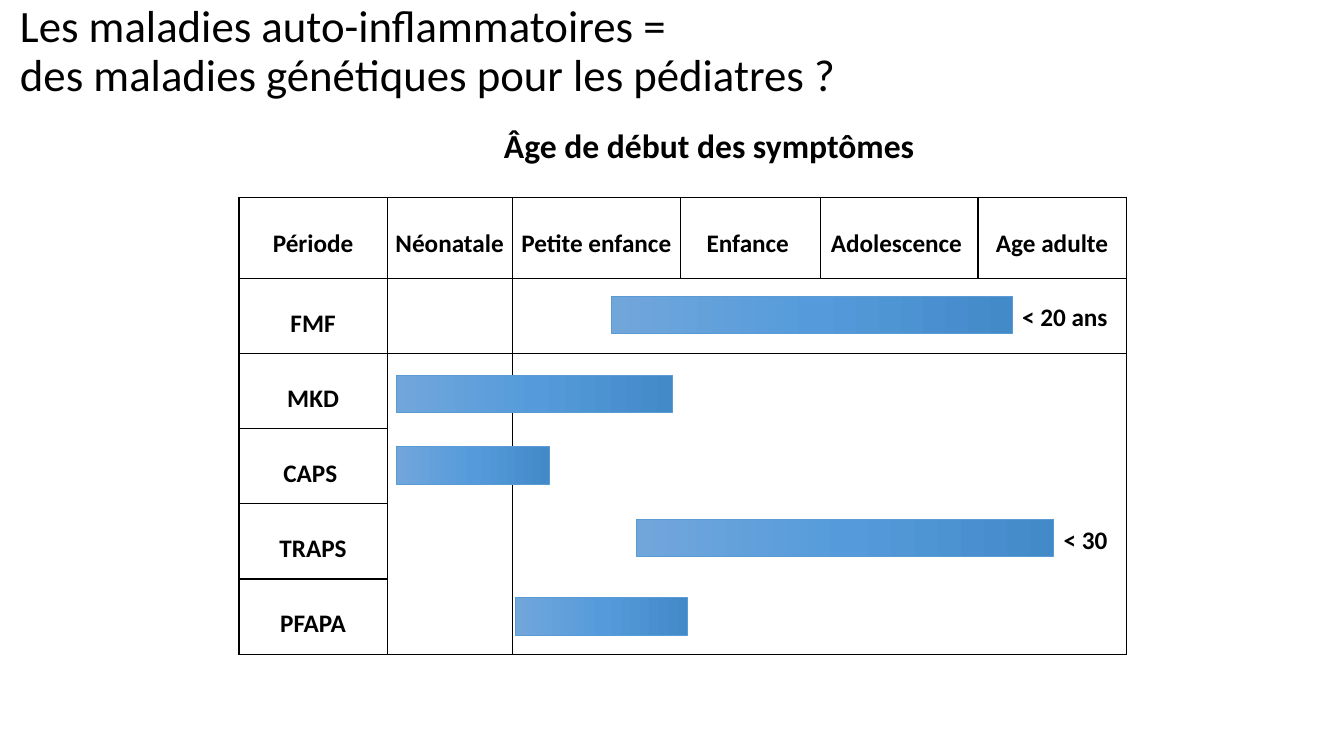
from copy import deepcopy
from dataclasses import dataclass
from itertools import accumulate

from lxml import etree
from pptx import Presentation
from pptx.dml.color import RGBColor
from pptx.enum.shapes import MSO_SHAPE
from pptx.enum.text import MSO_ANCHOR, MSO_AUTO_SIZE, PP_ALIGN
from pptx.oxml.ns import qn
from pptx.util import Inches, Pt

RECTANGLE = MSO_SHAPE.RECTANGLE
TOP, MIDDLE = MSO_ANCHOR.TOP, MSO_ANCHOR.MIDDLE
CENTER = PP_ALIGN.CENTER
GROW, FIXED = MSO_AUTO_SIZE.SHAPE_TO_FIT_TEXT, MSO_AUTO_SIZE.NONE

SLIDE_WIDTH, SLIDE_HEIGHT = Inches(13.33), Inches(7.5)


@dataclass(frozen=True)
class Theme:
    font: str = "Calibri"
    ink: str = "000000"
    bar_line: str = "5B9BD5"
    bar_gradient: tuple[str, ...] = ("71A6DB", "559BDB", "438AC9")
    title_size: int = 32
    heading_size: int = 24
    body_size: int = 18
    border_width: float = 1
    bar_line_width: float = 0.5


@dataclass(frozen=True)
class Onset:
    disease: str
    start_column: float
    end_column: float
    top_row: float
    limit: str = ""


@dataclass(frozen=True)
class Caption:
    text: str
    left: int
    top: int
    width: int
    height: int
    size: int
    bold: bool = True
    wrap: bool = False
    spacing: float = 1.0


def across(percent: float) -> int:
    return round(SLIDE_WIDTH * percent / 100)


def down(percent: float) -> int:
    return round(SLIDE_HEIGHT * percent / 100)


THEME = Theme()
PERIODS = ("Période", "Néonatale", "Petite enfance", "Enfance ", "Adolescence ", "Age adulte")
ONSETS = (
    Onset("FMF", 2.59, 5.23, 1.24, "< 20 ans"),
    Onset("MKD", 1.07, 2.95, 2.29),
    Onset("CAPS ", 1.07, 2.22, 3.24),
    Onset("TRAPS", 2.74, 5.51, 4.2, "< 30"),
    Onset("PFAPA", 2.02, 3.05, 5.25),
)
COLUMN_WIDTHS = [across(share) for share in (11.03, 9.3, 12.53, 10.43, 11.7, 11.03)]
ROW_HEIGHTS = [down(10.67)] + [down(9.95)] * len(ONSETS)
COLUMN_EDGES = list(accumulate(COLUMN_WIDTHS, initial=across(17.78)))
ROW_EDGES = list(accumulate(ROW_HEIGHTS, initial=down(26.13)))
BAR_HEIGHT = ROW_HEIGHTS[-1] // 2
LIMIT_END_COLUMN = 5.95


def grid_position(edges: list[int], place: float) -> int:
    index = int(place)
    return round(edges[index] + (place - index) * (edges[index + 1] - edges[index]))


def apply_font(run, size: int, bold: bool) -> None:
    formats = {"name": THEME.font, "size": Pt(size), "bold": bold}
    for attribute, value in formats.items():
        setattr(run.font, attribute, value)
    run.font.color.rgb = RGBColor.from_string(THEME.ink)


def draw_caption(slide, caption: Caption) -> None:
    box = slide.shapes.add_textbox(caption.left, caption.top, caption.width, caption.height)
    formats = {
        "word_wrap": caption.wrap,
        "auto_size": FIXED if caption.wrap else GROW,
        "vertical_anchor": MIDDLE if caption.wrap else TOP,
    }
    for attribute, value in formats.items():
        setattr(box.text_frame, attribute, value)
    paragraph = box.text_frame.paragraphs[0]
    paragraph.text = caption.text
    paragraph.line_spacing = caption.spacing
    for run in paragraph.runs:
        apply_font(run, caption.size, caption.bold)


def draw_borders(cell, row: int, column: int) -> None:
    last_row, last_column = len(ONSETS), len(PERIODS) - 1
    sides = {
        "a:lnL": row == 0 or column <= 2,
        "a:lnR": row == 0 or column in (0, 1, last_column),
        "a:lnT": column == 0 or row <= 2,
        "a:lnB": column == 0 or row in (0, 1, last_row),
    }
    properties = cell._tc.get_or_add_tcPr()
    for side, visible in sides.items():
        border = etree.SubElement(properties, qn(side), w=str(Pt(THEME.border_width)))
        if visible:
            fill = etree.SubElement(border, qn("a:solidFill"))
            etree.SubElement(fill, qn("a:srgbClr"), val=THEME.ink)
        else:
            etree.SubElement(border, qn("a:noFill"))


def draw_cell(cell, row: int, column: int) -> None:
    draw_borders(cell, row, column)
    cell.fill.background()
    formats = {
        "margin_left": across(0.53),
        "margin_right": across(0.53),
        "margin_top": 0,
        "margin_bottom": 0,
        "vertical_anchor": MIDDLE if row else TOP,
    }
    for attribute, value in formats.items():
        setattr(cell, attribute, value)
    if row and column:
        return
    paragraph = cell.text_frame.paragraphs[0]
    paragraph.alignment = CENTER
    paragraph.line_spacing = 1.5 if row else 2.0
    run = paragraph.add_run()
    run.text = ONSETS[row - 1].disease if row else PERIODS[column]
    apply_font(run, THEME.body_size, True)


def draw_periods(slide) -> None:
    table = slide.shapes.add_table(
        len(ROW_HEIGHTS), len(COLUMN_WIDTHS), COLUMN_EDGES[0], ROW_EDGES[0],
        sum(COLUMN_WIDTHS), sum(ROW_HEIGHTS),
    ).table
    table.first_row = table.horz_banding = False
    for column, width in enumerate(COLUMN_WIDTHS):
        table.columns[column].width = width
    for row, height in enumerate(ROW_HEIGHTS):
        table.rows[row].height = height
        for column in range(len(COLUMN_WIDTHS)):
            draw_cell(table.cell(row, column), row, column)


def draw_onset(slide, onset: Onset) -> None:
    left = grid_position(COLUMN_EDGES, onset.start_column)
    right = grid_position(COLUMN_EDGES, onset.end_column)
    top = grid_position(ROW_EDGES, onset.top_row)
    bar = slide.shapes.add_shape(RECTANGLE, left, top, right - left, BAR_HEIGHT)
    bar.shadow.inherit = False
    bar.line.color.rgb = RGBColor.from_string(THEME.bar_line)
    bar.line.width = Pt(THEME.bar_line_width)
    bar.fill.gradient()
    bar.fill.gradient_angle = 0
    stops = bar._element.spPr.find(".//" + qn("a:gsLst"))
    stops.insert(1, deepcopy(stops[0]))
    for index, (stop, color) in enumerate(zip(bar.fill.gradient_stops, THEME.bar_gradient)):
        stop.position = index / 2
        stop.color.rgb = RGBColor.from_string(color)
    if onset.limit:
        limit_end = grid_position(COLUMN_EDGES, LIMIT_END_COLUMN)
        draw_caption(slide, Caption(
            onset.limit, right, top, limit_end - right, down(5.33), THEME.body_size))


def main() -> None:
    presentation = Presentation()
    presentation.slide_width, presentation.slide_height = SLIDE_WIDTH, SLIDE_HEIGHT
    slide = presentation.slides.add_slide(presentation.slide_layouts[6])
    draw_caption(slide, Caption(
        "Les maladies auto-inflammatoires = \vdes maladies génétiques pour les pédiatres ?",
        across(0.75), down(0.53), across(82.97), down(12.8),
        THEME.title_size, bold=False, wrap=True, spacing=0.9))
    draw_periods(slide)
    for onset in ONSETS:
        draw_onset(slide, onset)
    draw_caption(slide, Caption(
        "Âge de début des symptômes",
        across(36.76), down(15.87), across(32.33), down(6.67), THEME.heading_size))
    presentation.save("out.pptx")


if __name__ == "__main__":
    main()
